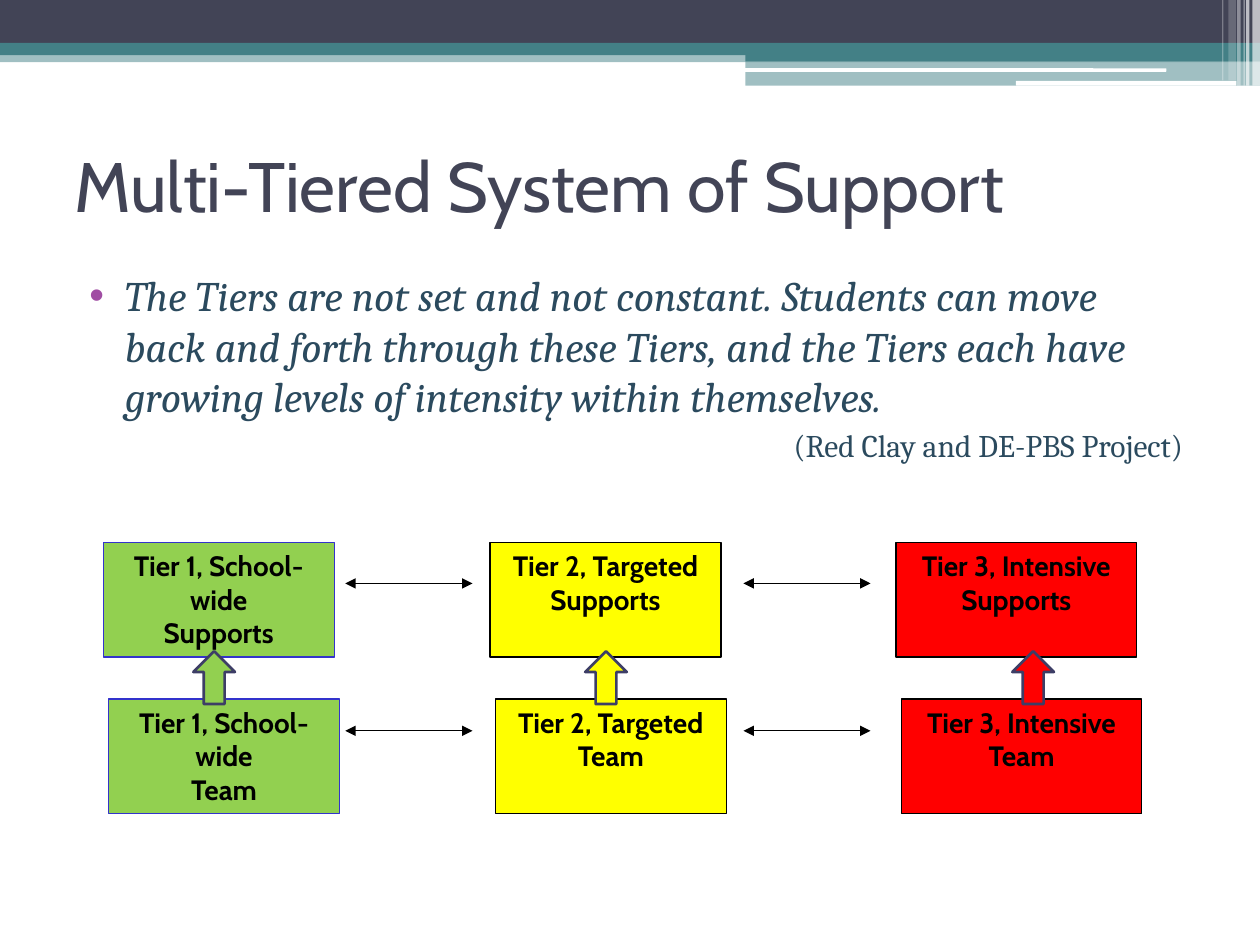
import pptx
import pptx.dml.color
import pptx.enum.shapes
import pptx.enum.text
import pptx.oxml.ns
import pptx.util
from lxml import etree

Pt = pptx.util.Pt
RGBColor = pptx.dml.color.RGBColor
SHAPE = pptx.enum.shapes.MSO_SHAPE
ALIGN = pptx.enum.text.PP_ALIGN
ANCHOR = pptx.enum.text.MSO_ANCHOR
qn = pptx.oxml.ns.qn

WHITE = RGBColor(0xFF, 0xFF, 0xFF)
BLACK = RGBColor(0, 0, 0)
SLATE = RGBColor(0x42, 0x44, 0x56)
TEAL = RGBColor(0x43, 0x80, 0x86)
NAVY = RGBColor(0x2B, 0x4A, 0x5E)
PURPLE = RGBColor(0xA0, 0x4D, 0xA3)
GREEN = RGBColor(0x92, 0xD0, 0x50)
YELLOW = RGBColor(0xFF, 0xFF, 0)
RED = RGBColor(0xFF, 0, 0)
BLUE = RGBColor(0x33, 0x33, 0xCC)
ARROW_EDGE = RGBColor(0x3D, 0x3E, 0x66)

# Header bars: left, top, width, height, colour, opacity in percent
HEADER_BARS = [
    (0, 29, 720, 6.5, TEAL, 50),
    (0, 0, 720, 24.5, SLATE, 100),
    (0, 24.5, 720, 7, TEAL, 100),
    (426, 28, 294, 7, TEAL, 100),
    (426, 35, 294, 14, TEAL, 50),
]
# Rounded white strips: left, top, width, height
HEADER_STRIPS = [(425.5, 39, 241, 2), (580.5, 46.2, 126, 2.7)]
# Vertical stripes at the right edge: left, width, height, opacity
HEADER_STRIPES = [
    (715.7, 4.3, 49, 65), (712, 2, 49, 65), (710.6, 0.7, 49, 60),
    (707, 2, 49, 40), (702, 4.3, 46, 20), (698.4, 0.7, 46, 30),
]
# Tiers: left, width, fill, edge, up arrow left, supports label, team label
TIERS = [
    (59, 132, GREEN, BLUE, 107.3,
     ["Tier 1, School-wide\nSupports"], ["Tier 1, School-wide\nTeam"]),
    (280, 132, YELLOW, BLACK, 331.2,
     ["Tier 2, Targeted Supports"], ["Tier 2, Targeted", "Team"]),
    (512, 137.5, RED, BLACK, 575.3,
     ["Tier 3, Intensive Supports"], ["Tier 3, Intensive", "Team"]),
]
BOX_HEIGHT = 65.5
SUPPORTS_TOP, TEAM_TOP = 310, 399.4
TEAM_SHIFT = 3
LINK_LEFTS, LINK_LENGTH = (197.3, 424.8), 72.7
LINK_TOPS = (333.4, 417.6)


def write_text(para, text, font="Cabin", size=16, color=BLACK, bold=False,
               italic=False, align=ALIGN.LEFT, before=0):
    """Fill a paragraph; a newline in the text is a line break."""
    para.alignment = align
    para.space_before = Pt(before)
    for number, line in enumerate(text.split("\n")):
        if number:
            para.add_line_break()
        span = para.add_run()
        span.text = line
        span.font.name = font
        span.font.size = Pt(size)
        span.font.color.rgb = color
        span.font.bold = bold
        span.font.italic = italic


def set_indent(para, margin, indent, bullet=None, bullet_color=None):
    properties = para._p.get_or_add_pPr()
    properties.set("marL", str(Pt(margin)))
    properties.set("indent", str(Pt(indent)))
    if bullet is None:
        etree.SubElement(properties, qn("a:buNone"))
        return
    tint = etree.SubElement(properties, qn("a:buClr"))
    etree.SubElement(tint, qn("a:srgbClr"), val=str(bullet_color))
    etree.SubElement(properties, qn("a:buChar"), char=bullet)


def add_block(page, kind, left, top, width, height, fill, opacity=100,
              edge=None, weight=0.75):
    block = page.shapes.add_shape(kind, Pt(left), Pt(top), Pt(width), Pt(height))
    block.shadow.inherit = False
    block.fill.solid()
    block.fill.fore_color.rgb = fill
    if opacity < 100:
        tint = block._element.spPr.find(qn("a:solidFill")).find(qn("a:srgbClr"))
        etree.SubElement(tint, qn("a:alpha"), val=str(opacity * 1000))
    if edge is None:
        block.line.fill.background()
    else:
        block.line.color.rgb = edge
        block.line.width = Pt(weight)
    return block


def add_tier_box(page, left, top, width, fill, edge, label):
    box = add_block(page, SHAPE.RECTANGLE, left, top, width, BOX_HEIGHT, fill, edge=edge)
    frame = box.text_frame
    frame.word_wrap = True
    frame.vertical_anchor = ANCHOR.TOP
    for number, text in enumerate(label):
        para = frame.add_paragraph() if number else frame.paragraphs[0]
        write_text(para, text, bold=True, align=ALIGN.CENTER)


def add_up_arrow(page, left, fill):
    arrow = add_block(page, SHAPE.RIGHT_ARROW, left, 375.3, 30.2, 23.8, fill,
                      edge=ARROW_EDGE, weight=1.5)
    arrow.rotation = 270


def add_double_arrow(page, left, top):
    link = page.shapes.add_connector(
        pptx.enum.shapes.MSO_CONNECTOR.STRAIGHT,
        Pt(left), Pt(top), Pt(left + LINK_LENGTH), Pt(top))
    link.line.color.rgb = BLACK
    link.line.width = Pt(0.75)
    properties = link._element.spPr
    for end in ("a:headEnd", "a:tailEnd"):
        etree.SubElement(properties.find(qn("a:ln")), qn(end), type="triangle")
    etree.SubElement(properties, qn("a:effectLst"))


def add_header(page):
    for left, top, width, height, color, opacity in HEADER_BARS:
        add_block(page, SHAPE.RECTANGLE, left, top, width, height, color, opacity)
    for strip in HEADER_STRIPS:
        add_block(page, SHAPE.ROUNDED_RECTANGLE, *strip, WHITE)
    for left, width, height, opacity in HEADER_STRIPES:
        add_block(page, SHAPE.RECTANGLE, left, 0, width, height, WHITE, opacity)


def place_frame(holder, top, height, anchor):
    holder.left, holder.top = Pt(35.3), Pt(top)
    holder.width, holder.height = Pt(648), Pt(height)
    frame = holder.text_frame
    frame.word_wrap = True
    frame.auto_size = pptx.enum.text.MSO_AUTO_SIZE.NONE
    frame.vertical_anchor = anchor
    return frame


def fill_placeholders(page):
    title = place_frame(page.shapes.title, 63.4, 84.2, ANCHOR.MIDDLE)
    write_text(title.paragraphs[0], "Multi-Tiered System of Support", size=40, color=SLATE)

    body = place_frame(page.placeholders[1], 150.5, 340.5, ANCHOR.TOP)
    quote = body.paragraphs[0]
    write_text(quote, "The Tiers are not set and not constant. Students can move back "
               "and forth through these Tiers, and the Tiers each have growing levels "
               "of intensity within themselves.",
               font="Cambria", size=24, color=NAVY, italic=True, before=3)
    set_indent(quote, 28.8, -20.2, "•", PURPLE)
    credit = body.add_paragraph()
    write_text(credit, "(Red Clay and DE-PBS Project)", font="Cambria", size=18,
               color=NAVY, align=ALIGN.RIGHT, before=3)
    set_indent(credit, 8.6, 0)


def main():
    deck = pptx.Presentation()
    deck.slide_width, deck.slide_height = Pt(720), Pt(540)
    page = deck.slides.add_slide(deck.slide_layouts[1])
    add_header(page)
    fill_placeholders(page)

    # Tier boxes in two rows, joined by up arrows
    for left, width, fill, edge, arrow_left, supports, team in TIERS:
        add_tier_box(page, left, SUPPORTS_TOP, width, fill, edge, supports)
        add_tier_box(page, left + TEAM_SHIFT, TEAM_TOP, width, fill, edge, team)
        add_up_arrow(page, arrow_left, fill)

    # Two-way links between neighbouring tiers
    for top in LINK_TOPS:
        for left in LINK_LEFTS:
            add_double_arrow(page, left, top)

    deck.save("out.pptx")


if __name__ == "__main__":
    main()
